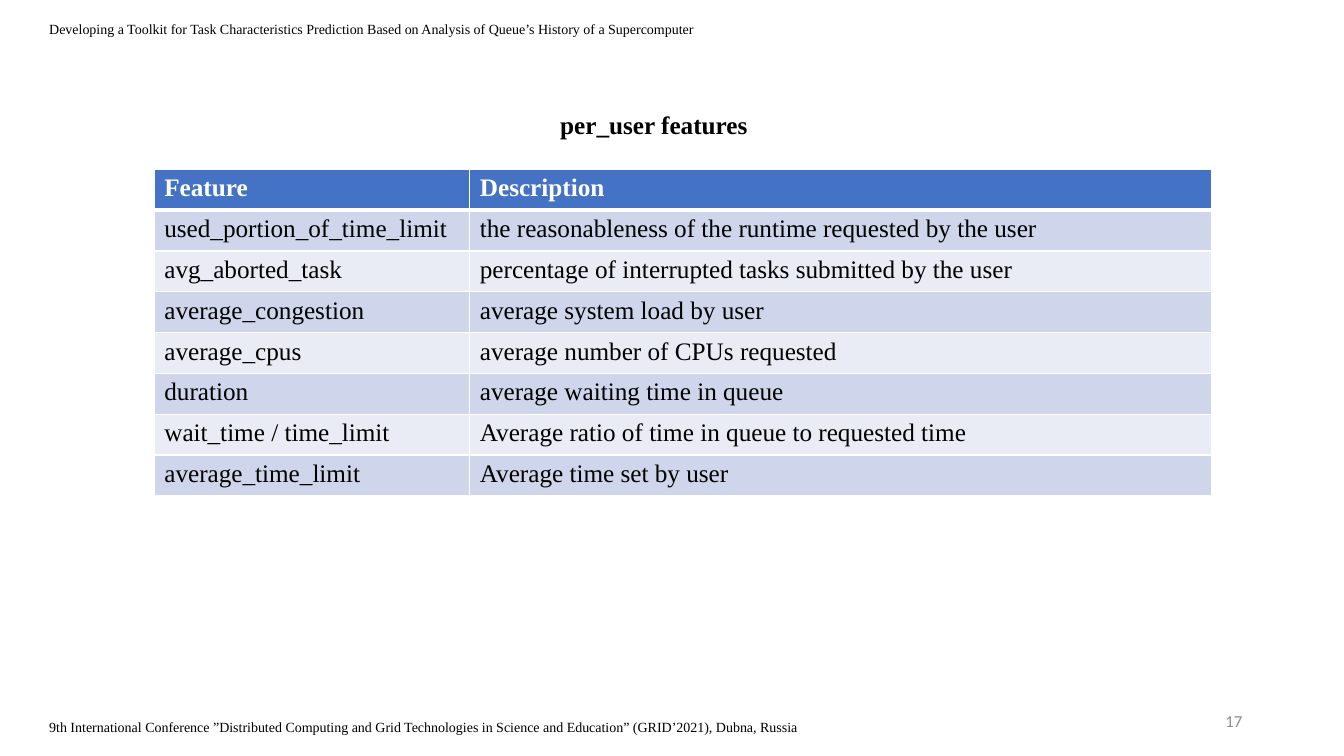
from dataclasses import dataclass

from lxml.etree import SubElement
from pptx import Presentation
from pptx.dml.color import RGBColor
from pptx.enum.text import MSO_ANCHOR, MSO_AUTO_SIZE, PP_ALIGN
from pptx.oxml.ns import qn
from pptx.shapes.base import BaseShape
from pptx.slide import Slide
from pptx.table import _Cell
from pptx.text.text import _Paragraph
from pptx.util import Inches, Pt

COLORS = {
    "text": "000000",
    "number": "8C8C8C",
    "white": "FFFFFF",
    "header": "4472C4",
    "odd_row": "CFD5EA",
    "even_row": "E9EBF5",
}
SERIF = "Times New Roman"
COLUMN_WIDTHS = (3.13, 7.36)
ROWS = (
    ("Feature", "Description"),
    ("used_portion_of_time_limit", "the reasonableness of the runtime requested by the user"),
    ("avg_aborted_task", "percentage of interrupted tasks submitted by the user"),
    ("average_congestion", "average system load by user"),
    ("average_cpus", "average number of CPUs requested"),
    ("duration", "average waiting time in queue"),
    ("wait_time / time_limit", "Average ratio of time in queue to requested time"),
    ("average_time_limit", "Average time set by user"),
)


@dataclass(frozen=True)
class TextStyle:
    size: float
    color: str = "text"
    font: str = SERIF
    bold: bool = False


@dataclass(frozen=True)
class Label:
    text: str
    left: float
    top: float
    width: float
    height: float
    style: TextStyle
    align: PP_ALIGN = PP_ALIGN.LEFT
    anchor: MSO_ANCHOR = MSO_ANCHOR.TOP
    autosize: MSO_AUTO_SIZE = MSO_AUTO_SIZE.SHAPE_TO_FIT_TEXT


TITLE = Label("per_user features", 0.62, 1.03, 11.73, 0.4,
              TextStyle(18, bold=True), PP_ALIGN.CENTER)
LABELS = (
    Label("Developing a Toolkit for Task Characteristics Prediction Based on "
          "Analysis of Queue’s History of a Supercomputer",
          0.39, 0.15, 7.73, 0.27, TextStyle(10)),
    Label("9th International Conference ”Distributed Computing and Grid Technologies "
          "in Science and Education” (GRID’2021), Dubna, Russia",
          0.39, 7.08, 7.73, 0.27, TextStyle(10)),
    Label("17", 9.42, 6.95, 3, 0.4, TextStyle(12, "number", "Calibri"),
          PP_ALIGN.RIGHT, MSO_ANCHOR.MIDDLE, MSO_AUTO_SIZE.NONE),
)


def add_run(paragraph: _Paragraph, text: str, style: TextStyle) -> None:
    """Append one formatted run to a paragraph."""
    run = paragraph.add_run()
    run.text = text
    run.font.name = style.font
    run.font.size = Pt(style.size)
    run.font.bold = style.bold
    run.font.color.rgb = RGBColor.from_string(COLORS[style.color])


def fill_label(shape: BaseShape, label: Label) -> None:
    """Place a text shape and write its label."""
    shape.left, shape.top = Inches(label.left), Inches(label.top)
    shape.width, shape.height = Inches(label.width), Inches(label.height)
    frame = shape.text_frame
    frame.word_wrap = True
    frame.auto_size = label.autosize
    frame.vertical_anchor = label.anchor
    paragraph = frame.paragraphs[0]
    paragraph.alignment = label.align
    add_run(paragraph, label.text, label.style)


def set_borders(cell: _Cell, widths: dict[str, float]) -> None:
    """Draw white borders of the given point widths around a cell."""
    properties = cell._tc.get_or_add_tcPr()
    for side, width in widths.items():
        line = SubElement(properties, qn(f"a:ln{side}"), w=str(Pt(width)))
        fill = SubElement(line, qn("a:solidFill"))
        SubElement(fill, qn("a:srgbClr"), val=COLORS["white"])


def add_feature_table(slide: Slide) -> None:
    """Add the banded table of features and descriptions."""
    table = slide.shapes.add_table(
        len(ROWS), len(COLUMN_WIDTHS), Inches(1.53), Inches(1.68),
        Inches(sum(COLUMN_WIDTHS)), Inches(3.24)).table
    for column, width in zip(table.columns, COLUMN_WIDTHS):
        column.width = Inches(width)
    for row_index, texts in enumerate(ROWS):
        is_header = row_index == 0
        band = "header" if is_header else "odd_row" if row_index % 2 else "even_row"
        style = TextStyle(18, "white" if is_header else "text", bold=is_header)
        borders = {"L": 1, "R": 1, "T": 3 if row_index == 1 else 1, "B": 3 if is_header else 1}
        for column_index, text in enumerate(texts):
            cell = table.cell(row_index, column_index)
            set_borders(cell, borders)
            cell.fill.solid()
            cell.fill.fore_color.rgb = RGBColor.from_string(COLORS[band])
            add_run(cell.text_frame.paragraphs[0], text, style)


def main() -> None:
    """Build and save the slide."""
    presentation = Presentation()
    presentation.slide_width, presentation.slide_height = Inches(13.33), Inches(7.5)
    slide = presentation.slides.add_slide(presentation.slide_layouts[5])
    fill_label(slide.shapes.title, TITLE)
    for label in LABELS:
        fill_label(slide.shapes.add_textbox(0, 0, 0, 0), label)
    add_feature_table(slide)
    presentation.save("out.pptx")


if __name__ == "__main__":
    main()
